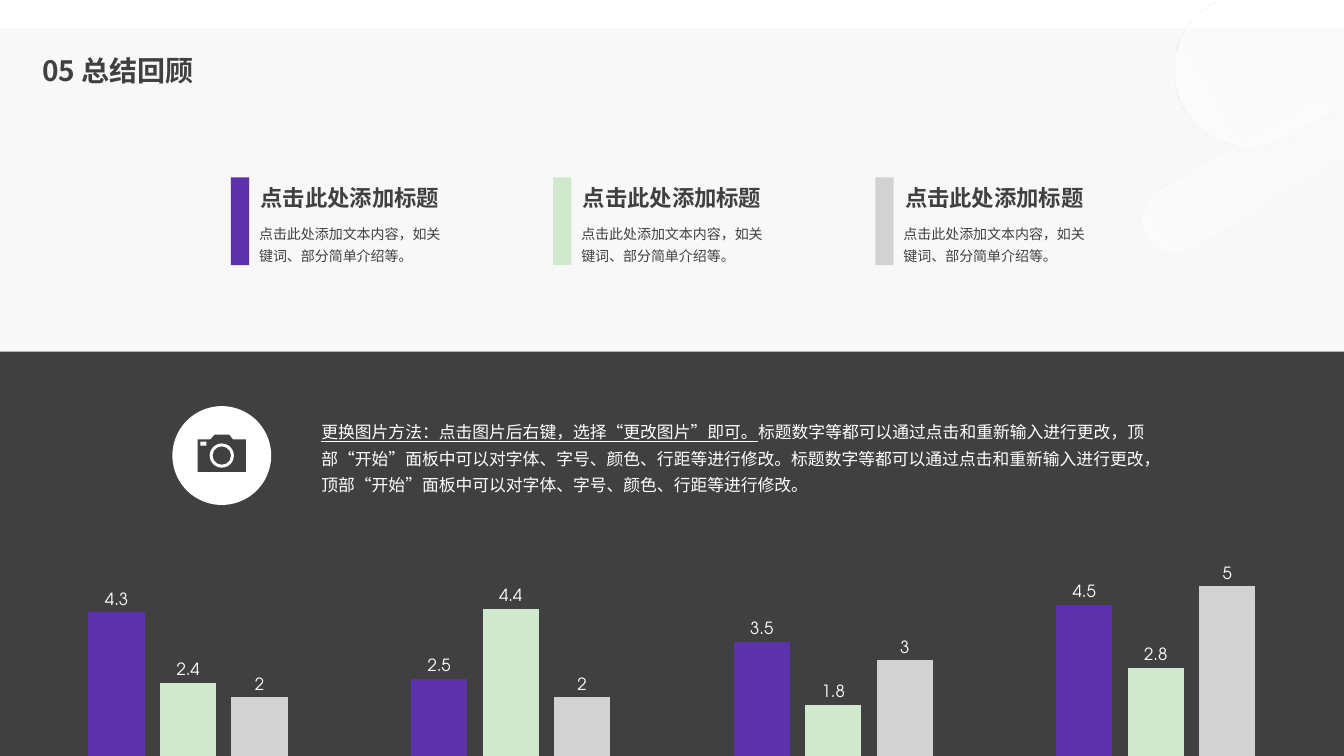
from dataclasses import dataclass

from lxml import etree
from pptx import Presentation
from pptx.chart.data import CategoryChartData
from pptx.dml.color import RGBColor
from pptx.enum.chart import XL_CHART_TYPE, XL_LABEL_POSITION
from pptx.enum.lang import MSO_LANGUAGE_ID
from pptx.enum.shapes import MSO_SHAPE
from pptx.enum.text import MSO_ANCHOR, MSO_AUTO_SIZE, PP_ALIGN
from pptx.oxml import parse_xml
from pptx.oxml.ns import nsdecls, qn
from pptx.util import Cm, Pt

RECT, OVAL, PILL = MSO_SHAPE.RECTANGLE, MSO_SHAPE.OVAL, MSO_SHAPE.ROUNDED_RECTANGLE
LEFT, CENTER = PP_ALIGN.LEFT, PP_ALIGN.CENTER
TOP, MIDDLE = MSO_ANCHOR.TOP, MSO_ANCHOR.MIDDLE
COLUMNS, OUTSIDE = XL_CHART_TYPE.COLUMN_CLUSTERED, XL_LABEL_POSITION.OUTSIDE_END
FIXED, CHINESE = MSO_AUTO_SIZE.NONE, MSO_LANGUAGE_ID.SIMPLIFIED_CHINESE
WIDE, HIGH = 33.87, 19.05


@dataclass(frozen=True)
class Theme:
    dark: str = "404040"
    pale: str = "F8F8F8"
    white: str = "FFFFFF"
    hues: tuple = ("5B32AB", "D0E9CE", "D2D2D2")
    sans: str = "Noto Sans CJK SC"
    round: str = "TeX Gyre Adventor"
    title: int = 20
    head: int = 16
    note: int = 12
    small: int = 10


def put(item, values):
    for name, value in values.items():
        setattr(item, name, value)


def rgb(code):
    return RGBColor.from_string(code)


class Deck:
    def __init__(self, theme):
        self.theme = theme
        self.show = Presentation()
        put(self.show, {"slide_width": Cm(WIDE), "slide_height": Cm(HIGH)})
        self.slide = self.show.slides.add_slide(self.show.slide_layouts[5])
        self.home = self.slide.shapes

    def group(self):
        """Send the next shapes to a new group."""
        self.home = self.slide.shapes.add_group_shape().shapes

    def level(self):
        """Send the next shapes straight to the slide."""
        self.home = self.slide.shapes

    def paint(self, shape, color):
        shape.shadow.inherit = False
        shape.line.fill.background()
        shape.fill.solid()
        shape.fill.fore_color.rgb = rgb(color)

    def shape(self, kind, box, color):
        item = self.home.add_shape(kind, *map(Cm, box))
        self.paint(item, color)
        return item

    def disc(self, x, y, size, color):
        """Draw a circle around a centre."""
        self.shape(OVAL, (x - size / 2, y - size / 2, size, size), color)

    def outline(self, points, color):
        start, *rest = [(Cm(x), Cm(y)) for x, y in points]
        pen = self.home.build_freeform(*start)
        pen.add_line_segments(rest, close=True)
        self.paint(pen.convert_to_shape(), color)

    def glow(self, box):
        """Draw a slanted capsule that fades from white to clear."""
        pill = self.shape(PILL, box, self.theme.white)
        pill.adjustments[0] = 0.5
        pill.rotation = 330
        pill.fill.gradient()
        pill.fill.gradient_angle = 0
        stops = next(pill._element.iter(qn("a:gsLst")))
        for old in list(stops):
            stops.remove(old)
        for place, alpha in ((0, 50), (21, 29), (85, 0), (100, 0)):
            stop = etree.SubElement(stops, qn("a:gs"), pos=str(place * 1000))
            tint = etree.SubElement(stop, qn("a:srgbClr"), val=self.theme.white)
            etree.SubElement(tint, qn("a:alpha"), val=str(alpha * 1000))

    def style(self, font, size, color, name, **more):
        put(font, {"size": Pt(size), "name": name, **more})
        font.color.rgb = rgb(color)

    def phrase(self, frame, runs, look, para, wrap=True, anchor=TOP):
        """Fill a frame with one paragraph of (text, extra format) runs."""
        put(frame, {"word_wrap": wrap, "vertical_anchor": anchor, "auto_size": FIXED})
        line = frame.paragraphs[0]
        put(line, para)
        for text, more in runs:
            run = line.add_run()
            run.text = text
            self.style(run.font, **look, **more, language_id=CHINESE)
            latin = run._r.rPr.find(qn("a:latin"))
            east = etree.Element(qn("a:ea"), typeface=self.theme.sans)
            latin.addnext(east)

    def text(self, box, *args, **more):
        self.phrase(self.home.add_textbox(*map(Cm, box)).text_frame, *args, **more)

    def title(self, box, text):
        item = self.slide.shapes.title
        put(item, dict(zip(("left", "top", "width", "height"), map(Cm, box))))
        look = {"size": self.theme.title, "color": self.theme.dark, "name": self.theme.sans}
        para = {"alignment": LEFT, "line_spacing": 0.9, "space_before": Pt(10)}
        self.phrase(item.text_frame, [(text, {"bold": True})], look, para, anchor=MIDDLE)
        self.slide.shapes._spTree.append(item._element)

    def card(self, x, color):
        theme = self.theme
        self.group()
        look = {"size": theme.small, "color": theme.dark, "name": theme.sans}
        self.text((x + 0.46, 5.44, 5.08, 1.37),
                  [("点击此处添加文本内容，如关键词、部分简单介绍等。", {})],
                  look, {"line_spacing": 1.3})
        look = {"size": theme.head, "color": theme.dark, "name": theme.round}
        self.text((x + 0.46, 4.32, 5.08, 1.14), [("点击此处添加标题", {"bold": True})],
                  look, {"line_spacing": 1.3, "alignment": CENTER}, wrap=False)
        self.shape(RECT, (x, 4.47, 0.46, 2.21), color)
        self.level()

    def camera(self, x, y):
        dark, white = self.theme.dark, self.theme.white
        self.group()
        self.disc(x, y, 2.49, white)
        half = [(0.18, -0.53), (0.28, -0.41), (0.61, -0.41), (0.61, 0.41)]
        edge = half + [(-dx, dy) for dx, dy in reversed(half)]
        self.outline([(x + dx, y + dy) for dx, dy in edge], dark)
        self.shape(RECT, (x - 0.54, y - 0.35, 0.15, 0.1), white)
        self.disc(x, y, 0.61, white)
        self.disc(x, y, 0.46, dark)
        self.level()

    def chart(self, box, cats, rows):
        theme = self.theme
        data = CategoryChartData()
        data.categories = cats
        for order, row in enumerate(rows, 1):
            data.add_series(f"Series {order}", row)
        chart = self.home.add_chart(COLUMNS, *map(Cm, box), data).chart
        put(chart, {"has_legend": False, "has_title": False})
        self.style(chart.font, theme.small, "000000", theme.round)
        put(chart.category_axis, {"visible": False})
        put(chart.value_axis, {"visible": False, "has_major_gridlines": False,
                               "minimum_scale": 0, "maximum_scale": 6})
        plot = chart.plots[0]
        put(plot, {"gap_width": 219, "overlap": -27, "vary_by_categories": False})
        for series, hue in zip(plot.series, theme.hues):
            series.format.fill.solid()
            series.format.fill.fore_color.rgb = rgb(hue)
            labels = series.data_labels
            put(labels, {"show_value": True, "position": OUTSIDE})
            self.style(labels.font, theme.note, theme.white, theme.round)
        area = chart._chartSpace.chart.plotArea
        for old in area.findall(qn("c:layout")):
            area.remove(old)
        parts = {"layoutTarget": "inner", "xMode": "edge", "yMode": "edge",
                 "x": 0.02, "y": 0.03, "w": 0.96, "h": 0.95}
        inner = "".join(f'<c:{key} val="{value}"/>' for key, value in parts.items())
        area.insert(0, parse_xml(f'<c:layout {nsdecls("c")}><c:manualLayout>{inner}'
                                 "</c:manualLayout></c:layout>"))


def main():
    theme = Theme()
    deck = Deck(theme)
    deck.shape(RECT, (0, 0.71, WIDE, 17.63), theme.pale)
    deck.glow((27.84, -6.73, 30.15, 3.84))
    deck.glow((27.99, 1.73, 13.39, 1.7))
    deck.shape(RECT, (0, 8.86, WIDE, HIGH - 8.86), theme.dark)
    deck.title((0.81, 1.09, 12.67, 1.47), "05 总结回顾")
    deck.chart((0, 13.67, WIDE, 5.89), ["1", "2", "3", "4"],
               [(4.3, 2.5, 3.5, 4.5), (2.4, 4.4, 1.8, 2.8), (2, 2, 3, 5)])
    deck.camera(5.59, 11.48)
    for spot, hue in enumerate(theme.hues):
        deck.card(5.82 + spot * 8.12, hue)
    look = {"size": theme.note, "color": theme.white, "name": theme.sans}
    runs = [("更换图片方法：点击图片后右键，选择“更改图片”即可。", {"underline": True}),
            ("标题数字等都可以通过点击和重新输入进行更改，顶部“开始”面板中可以对字体、"
             "字号、颜色、行距等进行修改。标题数字等都可以通过点击和重新输入进行更改，"
             "顶部“开始”面板中可以对字体、字号、颜色、行距等进行修改。", {})]
    deck.text((7.85, 10.36, 21.72, 2.26), runs, look, {"line_spacing": 1.3})
    deck.show.save("out.pptx")


if __name__ == "__main__":
    main()
